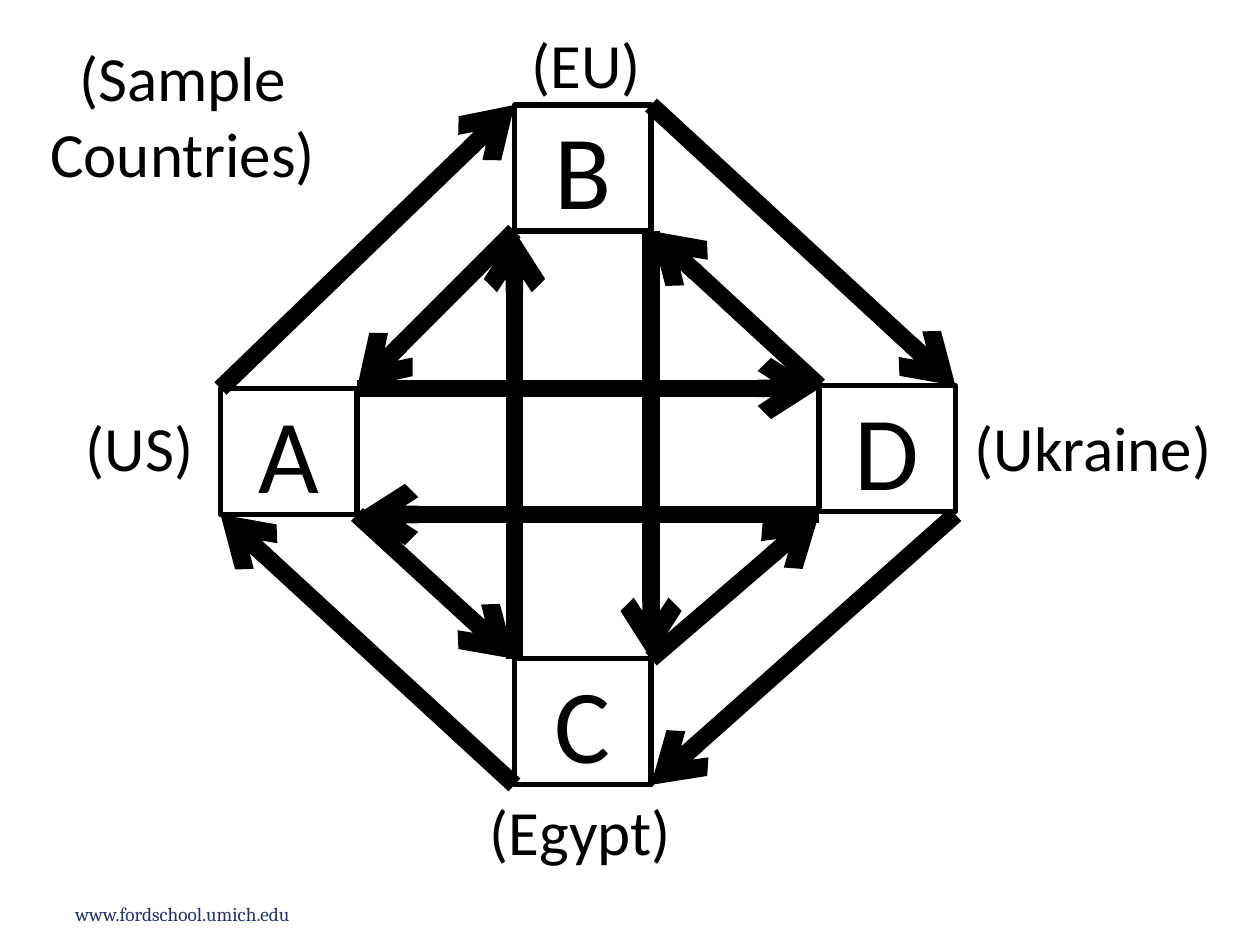
"""Build a slide of four sample countries joined by directed arrows."""
import dataclasses

import lxml.etree
import pptx
import pptx.dml.color
import pptx.enum.shapes
import pptx.enum.text
import pptx.oxml.ns
import pptx.util


@dataclasses.dataclass(frozen=True)
class Theme:
    ink: str = "000000"
    paper: str = "FFFFFF"
    navy: str = "233368"
    font: str = "Calibri"
    footer_font: str = "Cambria"
    letter_size: int = 60
    label_size: int = 36
    footer_size: int = 11
    border: int = 3
    arrow: int = 10


class Diagram:
    def __init__(self, deck, theme, columns=120, rows=90):
        self.theme = theme
        self.page = deck.slides.add_slide(deck.slide_layouts[6])
        self.column = deck.slide_width / columns
        self.row = deck.slide_height / rows

    def place(self, column, row):
        return round(column * self.column), round(row * self.row)

    def color(self, value):
        return pptx.dml.color.RGBColor.from_string(value)

    def set_text(self, box, text, size, font, color, align, anchor):
        frame = box.text_frame
        frame.text = text
        frame.word_wrap = True
        frame.vertical_anchor = anchor
        para = frame.paragraphs[0]
        para.alignment = align
        for span in para.runs:
            span.font.size = pptx.util.Pt(size)
            span.font.name = font
            span.font.color.rgb = self.color(color)

    def country(self, letter, column, row):
        box = self.page.shapes.add_shape(
            pptx.enum.shapes.MSO_SHAPE.RECTANGLE, *self.place(column, row), *self.place(13, 12)
        )
        box.shadow.inherit = False
        box.fill.solid()
        box.fill.fore_color.rgb = self.color(self.theme.paper)
        box.line.color.rgb = self.color(self.theme.ink)
        box.line.width = pptx.util.Pt(self.theme.border)
        self.set_text(box, letter, self.theme.letter_size, self.theme.font, self.theme.ink,
                      pptx.enum.text.PP_ALIGN.CENTER, pptx.enum.text.MSO_ANCHOR.MIDDLE)

    def arrow(self, start, end):
        connector = self.page.shapes.add_connector(
            pptx.enum.shapes.MSO_CONNECTOR.STRAIGHT, *self.place(*start), *self.place(*end)
        )
        connector.line.color.rgb = self.color(self.theme.ink)
        connector.line.width = pptx.util.Pt(self.theme.arrow)
        name = pptx.oxml.ns.qn
        properties = connector.element.spPr
        lxml.etree.SubElement(properties.find(name("a:ln")), name("a:tailEnd"), type="arrow")
        lxml.etree.SubElement(properties, name("a:effectLst"))

    def label(self, text, column, row, width, height=8.5):
        box = self.page.shapes.add_textbox(*self.place(column, row), *self.place(width, height))
        self.set_text(box, text, self.theme.label_size, self.theme.font, self.theme.ink,
                      pptx.enum.text.PP_ALIGN.CENTER, pptx.enum.text.MSO_ANCHOR.TOP)

    def footer(self, text, column, row, width, height):
        box = self.page.shapes.add_textbox(*self.place(column, row), *self.place(width, height))
        self.set_text(box, text, self.theme.footer_size, self.theme.footer_font, self.theme.navy,
                      pptx.enum.text.PP_ALIGN.LEFT, pptx.enum.text.MSO_ANCHOR.BOTTOM)


ARROWS = [
    ((21, 37), (49, 10)),
    ((49, 22), (34, 37)),
    ((62, 22), (62, 62.75)),
    ((49, 62.75), (49, 22)),
    ((49, 74.75), (21, 49)),
    ((34, 49), (49, 62.75)),
    ((62, 62.75), (78, 49)),
    ((78, 36.75), (62, 22)),
    ((62, 10), (91, 36.75)),
    ((91, 49), (62, 74.75)),
    ((34, 37), (78, 37)),
    ((78, 49), (34, 49)),
]


def main():
    deck = pptx.Presentation()
    deck.slide_width = pptx.util.Inches(10)
    deck.slide_height = pptx.util.Inches(7.5)
    diagram = Diagram(deck, Theme())
    diagram.footer("www.fordschool.umich.edu", 6, 85.2, 32.6, 3.5)
    for letter, column, row in [("B", 49, 10), ("C", 49, 62.75), ("A", 21, 37)]:
        diagram.country(letter, column, row)
    for start, end in ARROWS:
        diagram.arrow(start, end)
    diagram.country("D", 78, 36.75)
    diagram.label("(EU)", 48.5, 1.8, 14.6)
    diagram.label("(US)", 6, 38.3, 14.6)
    diagram.label("(Egypt)", 44.4, 74.9, 21.7)
    diagram.label("(Ukraine)", 91.3, 38.3, 25.6)
    diagram.label("(Sample Countries)", 3.4, 3.1, 28, 15.7)
    deck.save("out.pptx")


if __name__ == "__main__":
    main()
